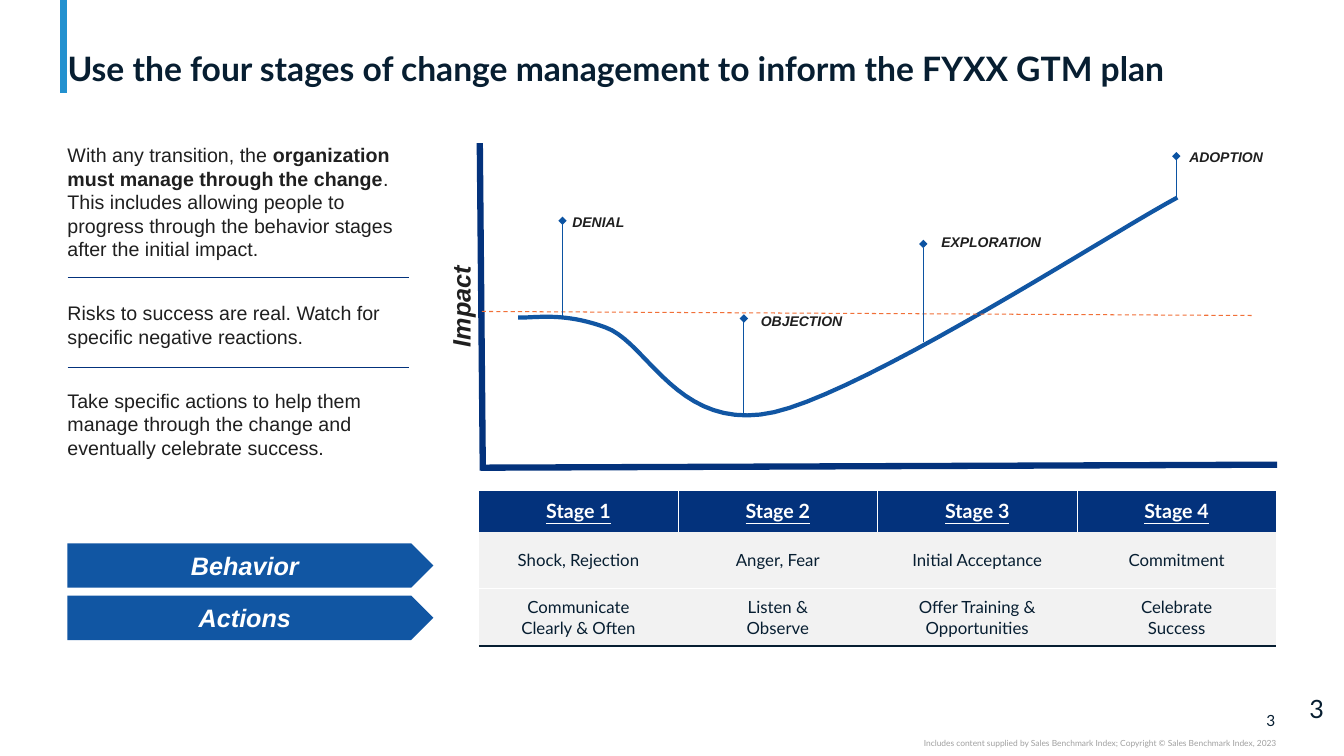
from dataclasses import dataclass

from lxml.etree import SubElement
from pptx import Presentation
from pptx.dml.color import RGBColor
from pptx.enum.dml import MSO_LINE
from pptx.enum.shapes import MSO_CONNECTOR, MSO_SHAPE
from pptx.enum.text import MSO_ANCHOR, PP_ALIGN
from pptx.oxml.ns import qn
from pptx.util import Inches, Pt

WIDTH, HEIGHT = Inches(13.33), Inches(7.5)
COLUMN, ROW = WIDTH / 40, HEIGHT / 30
COLORS = {
    "navy": "03327C", "blue": "1156A3", "pin": "0C53A2", "accent": "2391CF",
    "orange": "F17038", "ink": "071E31", "text": "1F1F1F", "muted": "A0A0A0",
    "band": "F2F2F2", "white": "FFFFFF",
}
STAGES = [
    ("Stage 1", "Shock, Rejection", "Communicate\nClearly & Often"),
    ("Stage 2", "Anger, Fear", "Listen &\nObserve"),
    ("Stage 3", "Initial Acceptance", "Offer Training & Opportunities"),
    ("Stage 4", "Commitment", "Celebrate\nSuccess"),
]
PINS = [
    ("DENIAL", 2.49, 6.96, 3.08, 2.49, 2.6),
    ("OBJECTION", 7.89, 10.84, 6.96, 8.1, 6.52),
    ("EXPLORATION", 13.23, 7.88, 4, 13.47, 3.4),
    ("ADOPTION", 20.76, 2.2, 0.52, 20.85, 0),
]
CURVE = [
    (1.17, 6.92), (1.62, 6.96), (2.49, 6.68), (3.78, 7.32), (5.04, 7.92),
    (5.94, 11.52), (8.79, 10.68), (11.61, 9.8), (18.78, 3.6), (20.79, 2.16),
]
ADVICE = [
    "With any transition, the **organization must manage through the change**. "
    "This includes allowing people to progress through the behavior stages after the initial impact.",
    "Risks to success are real. Watch for specific negative reactions.",
    "Take specific actions to help them manage through the change and eventually celebrate success.",
]


@dataclass
class Box:
    """An area counted in grid columns and rows."""
    left: float
    top: float
    width: float
    height: float

    def point(self, x, y):
        """Return the slide position of a point inside the box."""
        return round((self.left + x) * COLUMN), round((self.top + y) * ROW)

    def inner(self, x, y, width, height):
        """Return a box placed relative to this one."""
        return Box(self.left + x, self.top + y, width, height)

    def frame(self):
        """Return left, top, width and height in slide units."""
        return *self.point(0, 0), round(self.width * COLUMN), round(self.height * ROW)


def color(name):
    """Look up a palette colour."""
    return RGBColor.from_string(COLORS[name])


def write_text(text_frame, paragraphs, size=14, font="Arial", ink="text", bold=False,
               italic=False, underline=False, align=PP_ALIGN.LEFT, anchor=MSO_ANCHOR.TOP,
               line=None, gap=0, margins=(0.1, 0.05)):
    """Write paragraphs, with bold parts between double asterisks."""
    text_frame.word_wrap = True
    text_frame.vertical_anchor = anchor
    text_frame.margin_left = text_frame.margin_right = Inches(margins[0])
    text_frame.margin_top = text_frame.margin_bottom = Inches(margins[1])
    for index, text in enumerate(paragraphs):
        paragraph = text_frame.add_paragraph() if index else text_frame.paragraphs[0]
        paragraph.alignment = align
        if line:
            paragraph.line_spacing = line
        if index:
            paragraph.space_before = Pt(gap)
        for part, words in enumerate(text.split("**")):
            for line_index, row_text in enumerate(words.split("\n")):
                if line_index:
                    paragraph.add_line_break()
                run = paragraph.add_run()
                run.text = row_text
                run.font.size, run.font.name = Pt(size), font
                run.font.bold = bold or part % 2 == 1
                run.font.italic, run.font.underline = italic, underline
                run.font.color.rgb = color(ink)


def add_text(slide, box, *paragraphs, rotation=0, **text_format):
    """Add a text box."""
    shape = slide.shapes.add_textbox(*box.frame())
    shape.rotation = rotation
    write_text(shape.text_frame, paragraphs, **text_format)


def add_line(slide, start, end, ink, width, dash=None, diamond=False):
    """Add a straight line without a shadow."""
    connector = slide.shapes.add_connector(MSO_CONNECTOR.STRAIGHT, *start, *end)
    connector.line.color.rgb = color(ink)
    connector.line.width = Pt(width)
    if dash:
        connector.line.dash_style = dash
    properties = connector.element.spPr
    if diamond:
        SubElement(properties.find(qn("a:ln")), qn("a:tailEnd"), type="diamond")
    SubElement(properties, qn("a:effectLst"))


def add_header(slide, box):
    """Place the accent bar and the title."""
    add_line(slide, box.point(-0.12, 0), box.point(-0.12, 3.68), "accent", 5)
    add_text(slide, box.inner(0, 0.16, box.width, 3.36),
             "Use the four stages of change management to inform the FYXX GTM plan",
             size=24, font="Lato", ink="ink", bold=True, anchor=MSO_ANCHOR.BOTTOM,
             line=0.9, margins=(0, 0))


def add_advice(slide, box):
    """Place the advice paragraphs and their dividers."""
    add_text(slide, box, *ADVICE, line=Pt(16.8), gap=28.8, margins=(0, 0))
    for y in (5.32, 8.92):
        add_line(slide, box.point(0, y), box.point(box.width, y), "navy", 0.75)


def bezier(points, share):
    """Return the point at a share of one cubic curve."""
    rest = 1 - share
    weights = (rest ** 3, 3 * rest ** 2 * share, 3 * rest * share ** 2, share ** 3)
    return tuple(sum(w * p[axis] for w, p in zip(weights, points)) for axis in (0, 1))


def add_impact_curve(slide, box):
    """Draw the axes, the change curve and the stage pins."""
    steps = 20
    outline = [box.point(*bezier(CURVE[first:first + 4], step / steps))
               for first in range(0, len(CURVE) - 1, 3) for step in range(1, steps + 1)]
    builder = slide.shapes.build_freeform(*box.point(*CURVE[0]))
    builder.add_line_segments(outline, close=False)
    curve = builder.convert_to_shape()
    curve.shadow.inherit = False
    curve.fill.background()
    curve.line.color.rgb = color("blue")
    curve.line.width = Pt(3)
    add_line(slide, box.point(0.03, 0), box.point(0.12, 13), "navy", 4.5)
    add_line(slide, box.point(23.76, 12.76), box.point(0.06, 12.88), "navy", 4.5)
    add_line(slide, box.point(0.09, 6.68), box.point(23.01, 6.84), "orange", 0.75, MSO_LINE.DASH)
    add_text(slide, box.inner(-5.13, 5.8, 9, 1.36), "Impact", rotation=270, size=18,
             bold=True, italic=True, align=PP_ALIGN.CENTER)
    for name, x, foot, head, label_left, label_top in PINS:
        add_line(slide, box.point(x, foot), box.point(x, head), "pin", 0.75, diamond=True)
        add_text(slide, box.inner(label_left, label_top, 4.4, 1.08), name,
                 size=10, bold=True, italic=True)


def add_border(cell, side, ink, width):
    """Draw one side of a table cell."""
    border = SubElement(cell._tc.get_or_add_tcPr(), qn(f"a:ln{side}"), w=str(Pt(width)))
    SubElement(SubElement(border, qn("a:solidFill")), qn("a:srgbClr"), val=COLORS[ink])


def add_stage_table(slide, box):
    """Place the table of stages, behaviors and actions."""
    frame = slide.shapes.add_table(3, len(STAGES), *box.frame())
    table = frame.table
    table.first_row = table.horz_banding = False
    style = next(frame.element.iter(qn("a:tableStyleId")))
    style.text = "{2D5ABB26-0587-4C30-8999-92F81FD0307C}"
    for row, height in zip(table.rows, (1.62, 2.27, 2.27)):
        row.height = round(height * ROW)
    for column, stage in enumerate(STAGES):
        for row, text in enumerate(stage):
            cell = table.cell(row, column)
            header = row == 0
            if header and column:
                add_border(cell, "L", "white", 0.75)
            if header and column < len(STAGES) - 1:
                add_border(cell, "R", "white", 0.75)
            if row == 2:
                add_border(cell, "T", "white", 0.75)
                add_border(cell, "B", "ink", 1.5)
            cell.fill.solid()
            cell.fill.fore_color.rgb = color("navy" if header else "band")
            write_text(cell.text_frame, [text], size=14 if header else 12, font="Lato",
                       ink="white" if header else "ink", bold=header, underline=header,
                       align=PP_ALIGN.CENTER)
            cell.vertical_anchor = MSO_ANCHOR.MIDDLE
            cell.margin_left = cell.margin_right = Inches(0.1)
            cell.margin_top = cell.margin_bottom = Inches(0.05)


def add_row_arrows(slide, box):
    """Place the arrows that name the table rows."""
    for index, name in enumerate(("Behavior", "Actions")):
        area = box.inner(0, index * 2.08, box.width, 1.76)
        arrow = slide.shapes.add_shape(MSO_SHAPE.PENTAGON, *area.frame())
        arrow.shadow.inherit = False
        arrow.fill.solid()
        arrow.fill.fore_color.rgb = color("blue")
        arrow.line.fill.background()
        write_text(arrow.text_frame, [name], size=18, ink="white", bold=True, italic=True,
                   align=PP_ALIGN.CENTER, anchor=MSO_ANCHOR.MIDDLE)


def add_footer(slide, box):
    """Place the page numbers and the copyright line."""
    add_text(slide, box.inner(14.46, 0.48, 1, 0.76), "3", size=11, font="Lato", ink="ink",
             align=PP_ALIGN.RIGHT, anchor=MSO_ANCHOR.MIDDLE, margins=(0, 0))
    add_text(slide, box.inner(0, 1.56, 15.48, 0.4),
             "Includes content supplied by Sales Benchmark Index; "
             "Copyright © Sales Benchmark Index, 2023",
             size=6, font="Lato", ink="muted", align=PP_ALIGN.RIGHT, margins=(0, 0))
    add_text(slide, box.inner(16.47, 0, 1.02, 0.8), "3", size=18, font="Lato", ink="ink",
             anchor=MSO_ANCHOR.MIDDLE, margins=(0, 0))


def main():
    """Build the slide and save it."""
    presentation = Presentation()
    presentation.slide_width, presentation.slide_height = WIDTH, HEIGHT
    slide = presentation.slides.add_slide(presentation.slide_layouts[6])
    add_header(slide, Box(2.01, 0, 35.97, 3.68))
    add_advice(slide, Box(2.01, 5.68, 10.15, 12.64))
    add_impact_curve(slide, Box(14.25, 5.68, 23.76, 13))
    add_stage_table(slide, Box(14.25, 19.48, 23.74, 6.16))
    add_row_arrows(slide, Box(2.01, 21.56, 10.89, 3.84))
    add_footer(slide, Box(22.5, 27.72, 17.5, 2))
    presentation.save("out.pptx")


if __name__ == "__main__":
    main()
